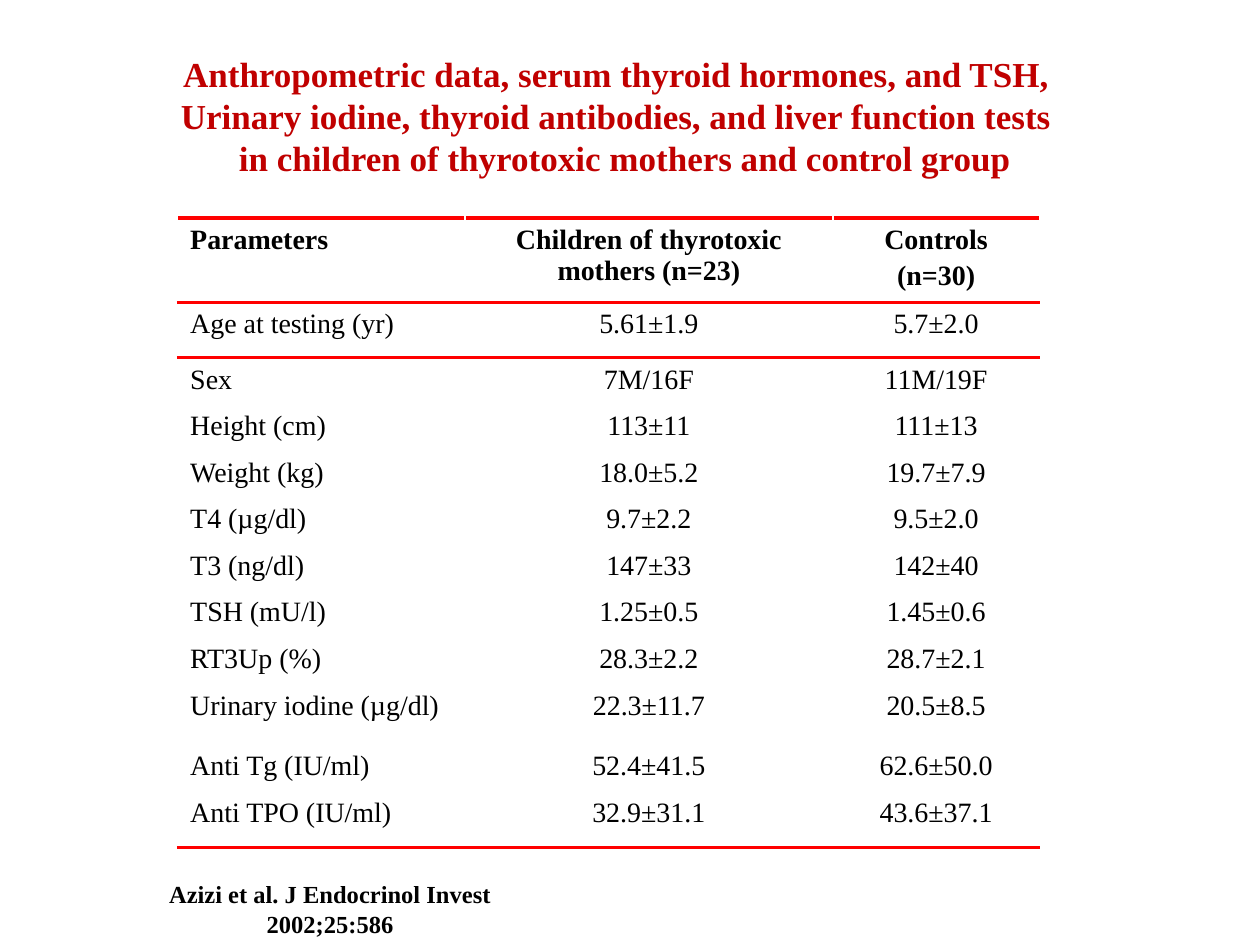
from pptx import Presentation
from pptx.dml.color import RGBColor
from pptx.enum.text import MSO_ANCHOR as Anchor, PP_ALIGN as Align
from pptx.oxml.ns import qn
from pptx.util import Inches, Pt
from lxml.etree import SubElement

TITLE_RED = RGBColor(0xC0, 0x00, 0x00)
RULE_RED = RGBColor(0xFF, 0x00, 0x00)
BLACK = RGBColor(0x00, 0x00, 0x00)
FONT = "Times New Roman"
RULE_WIDTH = Pt(2.25)

TITLE = (
    "Anthropometric data, serum thyroid hormones, and TSH, \n"
    "Urinary iodine, thyroid antibodies, and liver function tests \n"
    " in children of thyrotoxic mothers and control group"
)
CITATION = "Azizi et al. J Endocrinol Invest 2002;25:586"
RESULTS = [
    ("Parameters", "Children of thyrotoxic mothers (n=23)", "Controls\n(n=30)"),
    ("Age at testing (yr)", "5.61±1.9", "5.7±2.0"),
    ("Sex", "7M/16F", "11M/19F"),
    ("Height (cm)", "113±11", "111±13"),
    ("Weight (kg)", "18.0±5.2", "19.7±7.9"),
    ("T4 (µg/dl)", "9.7±2.2", "9.5±2.0"),
    ("T3 (ng/dl)", "147±33", "142±40"),
    ("TSH (mU/l)", "1.25±0.5", "1.45±0.6"),
    ("RT3Up (%)", "28.3±2.2", "28.7±2.1"),
    ("Urinary iodine (µg/dl)", "22.3±11.7", "20.5±8.5"),
    ("Anti Tg (IU/ml)", "52.4±41.5", "62.6±50.0"),
    ("Anti TPO (IU/ml)", "32.9±31.1", "43.6±37.1"),
]
COLUMN_WIDTHS = (2.28, 2.92, 1.64)
ROW_HEIGHT = 0.37
TALL_ROWS = {0: 0.67, 1: 0.44, 9: 0.48, 11: 0.45}


def write_text(frame, text, align, size, color=BLACK, bold=True):
    frame.text = text
    font_format = {"name": FONT, "size": Pt(size), "bold": bold}
    for index, paragraph in enumerate(frame.paragraphs):
        paragraph.alignment = align
        paragraph.space_before = Pt(size * 0.2 if index else 0)
        for run in paragraph.runs:
            for key, value in font_format.items():
                setattr(run.font, key, value)
            run.font.color.rgb = color


def add_rule(cell, side):
    rule = SubElement(cell._tc.get_or_add_tcPr(), qn(f"a:{side}"), w=str(RULE_WIDTH))
    fill = SubElement(rule, qn("a:solidFill"))
    SubElement(fill, qn("a:srgbClr"), val=str(RULE_RED))


def add_title(slide):
    title = slide.shapes.title
    place = {"left": 0.47, "top": 0.39, "width": 8.91, "height": 1.06}
    for key, value in place.items():
        setattr(title, key, Inches(value))
    title.text_frame.vertical_anchor = Anchor.MIDDLE
    write_text(title.text_frame, TITLE, Align.CENTER, 20, TITLE_RED)
    for paragraph in title.text_frame.paragraphs:
        paragraph.space_before = Pt(0)


def add_results(slide):
    heights = [TALL_ROWS.get(index, ROW_HEIGHT) for index in range(len(RESULTS))]
    results = slide.shapes.add_table(
        len(RESULTS), len(COLUMN_WIDTHS), Inches(1.41), Inches(1.73),
        Inches(sum(COLUMN_WIDTHS)), Inches(sum(heights)),
    ).table
    results.first_row = False
    results.horz_banding = False
    for column, width in zip(results.columns, COLUMN_WIDTHS):
        column.width = Inches(width)
    for row, height in zip(results.rows, heights):
        row.height = Inches(height)

    rules = {0: ("lnT", "lnB"), 1: ("lnT",), len(RESULTS) - 1: ("lnB",)}
    for row_index, values in enumerate(RESULTS):
        for column_index, value in enumerate(values):
            cell = results.cell(row_index, column_index)
            align = Align.CENTER if column_index else Align.LEFT
            write_text(cell.text_frame, value, align, 16, bold=row_index == 0)
            for side in rules.get(row_index, ()):
                add_rule(cell, side)
            cell.fill.background()


def add_citation(slide):
    citation = slide.shapes.add_textbox(
        Inches(1.23), Inches(6.93), Inches(2.78), Inches(0.34)
    )
    citation.text_frame.word_wrap = True
    write_text(citation.text_frame, CITATION, Align.CENTER, 14)


def main():
    deck = Presentation()
    deck.slide_width = Inches(10)
    deck.slide_height = Inches(7.5)
    slide = deck.slides.add_slide(deck.slide_layouts[5])
    add_title(slide)
    add_results(slide)
    add_citation(slide)
    deck.save("out.pptx")


if __name__ == "__main__":
    main()
